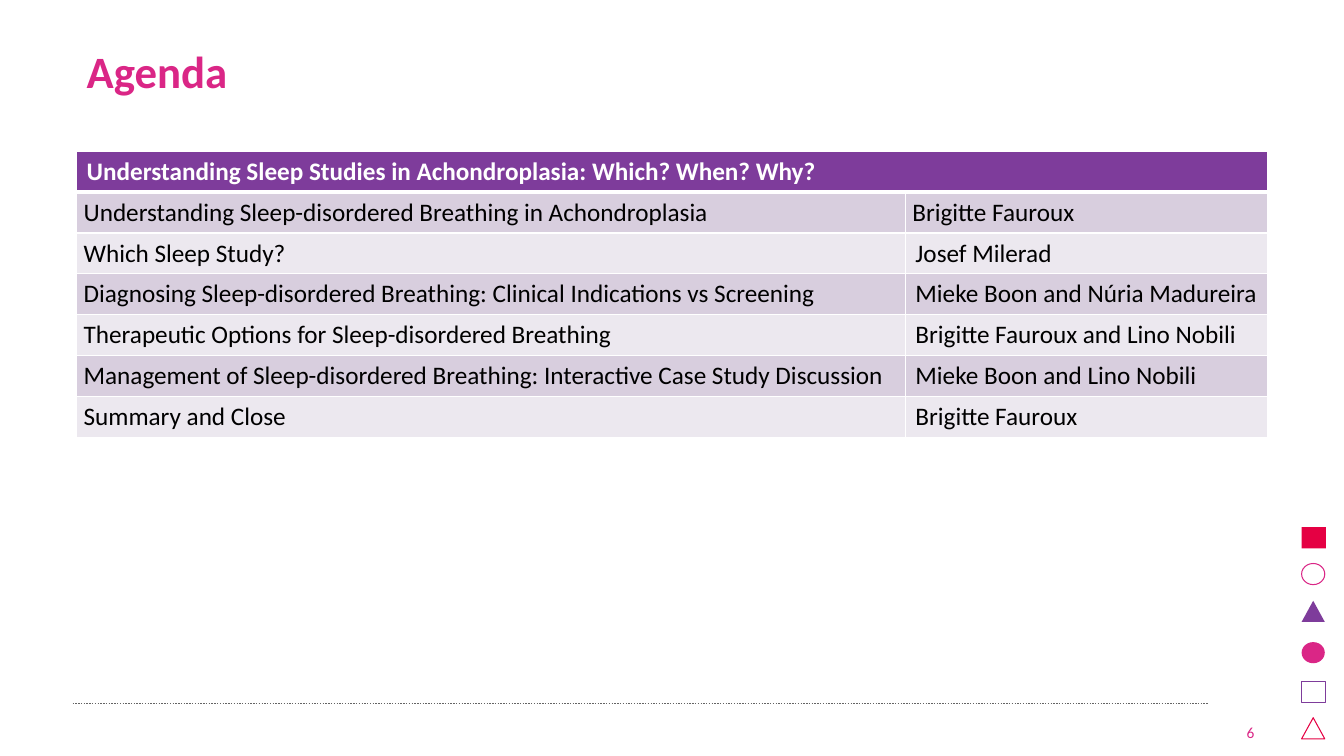
from lxml.etree import SubElement
from pptx import Presentation
from pptx.dml.color import RGBColor
from pptx.enum.dml import MSO_LINE
from pptx.enum.shapes import MSO_CONNECTOR, MSO_SHAPE as Preset
from pptx.enum.text import MSO_ANCHOR as Anchor, PP_ALIGN as Align
from pptx.oxml import parse_xml
from pptx.oxml.ns import nsdecls, qn
from pptx.util import Inches, Pt

TITLE = "Agenda"
PAGE_NUMBER = "6"
SESSION = "Understanding Sleep Studies in Achondroplasia: Which? When? Why?"
TALKS = [
    ("Understanding Sleep-disordered Breathing in Achondroplasia", "Brigitte Fauroux"),
    ("Which Sleep Study?", "Josef Milerad"),
    ("Diagnosing Sleep-disordered Breathing: Clinical Indications vs Screening",
     "Mieke Boon and Núria Madureira"),
    ("Therapeutic Options for Sleep-disordered Breathing", "Brigitte Fauroux and Lino Nobili"),
    ("Management of Sleep-disordered Breathing: Interactive Case Study Discussion",
     "Mieke Boon and Lino Nobili"),
    ("Summary and Close", "Brigitte Fauroux"),
]
PINK, PURPLE, RED = "DA2686", "7E3C9B", "E50043"
WHITE, BLACK, GREY = "FFFFFF", "000000", "646464"
BANDS = ["D8CEDE", "ECE8EF"]
ORNAMENTS = [
    (Preset.RECTANGLE, 5.23, 0.24, RED, True),
    (Preset.OVAL, 5.59, 0.23, PINK, False),
    (Preset.ISOSCELES_TRIANGLE, 5.96, 0.23, PURPLE, True),
    (Preset.OVAL, 6.37, 0.23, PINK, True),
    (Preset.RECTANGLE, 6.76, 0.24, PURPLE, False),
    (Preset.ISOSCELES_TRIANGLE, 7.12, 0.23, RED, False),
]
LEFT, WIDTH = 0.76, 11.81
COLUMNS = [8.22, 3.59]
ROW_HEIGHT = 2.84 / 7


def color(value):
    return RGBColor.from_string(value)


def style(para, size, value, bold=False):
    para.font.name = "Calibri"
    para.font.size = Pt(size)
    para.font.bold = bold
    para.font.color.rgb = color(value)


def add_borders(cell, bottom):
    sides = [("L", 1), ("R", 1), ("T", 1), ("B", bottom)]
    for index, (side, points) in enumerate(sides):
        border = parse_xml(
            f'<a:ln{side} {nsdecls("a")} w="{Pt(points)}"><a:solidFill>'
            f'<a:srgbClr val="{WHITE}"/></a:solidFill></a:ln{side}>')
        cell._tc.get_or_add_tcPr().insert(index, border)


def fill_cell(cell, text, fill, value=BLACK, bold=False, bottom=1):
    cell.text = text
    cell.vertical_anchor = Anchor.MIDDLE
    cell.fill.solid()
    cell.fill.fore_color.rgb = color(fill)
    style(cell.text_frame.paragraphs[0], 18, value, bold)
    add_borders(cell, bottom)


def tighten(cell):
    cell.margin_left = cell.margin_right = Inches(0.07)
    cell.margin_top = cell.margin_bottom = 0


def add_ornaments(page):
    for preset, top, width, value, solid in ORNAMENTS:
        shape = page.shapes.add_shape(
            preset, Inches(12.91), Inches(top), Inches(width), Inches(0.21))
        shape.shadow.inherit = False
        if solid:
            shape.fill.solid()
            shape.fill.fore_color.rgb = color(value)
            shape.line.fill.background()
        else:
            shape.fill.background()
            shape.line.color.rgb = color(value)
            shape.line.width = Pt(0.75)


def add_footer(page):
    rule = page.shapes.add_connector(
        MSO_CONNECTOR.STRAIGHT, Inches(0.72), Inches(6.98), Inches(11.99), Inches(6.98))
    rule.line.color.rgb = color(GREY)
    rule.line.width = Pt(1)
    rule.line.dash_style = MSO_LINE.ROUND_DOT
    SubElement(rule._element.spPr, qn("a:effectLst"))
    box = page.shapes.add_textbox(Inches(11.96), Inches(7.01), Inches(0.58), Inches(0.4))
    frame = box.text_frame
    frame.word_wrap = True
    frame.vertical_anchor = Anchor.BOTTOM
    frame.text = PAGE_NUMBER
    frame.paragraphs[0].alignment = Align.RIGHT
    style(frame.paragraphs[0], 11, PINK)


def add_title(page):
    title = page.shapes.title
    title.left, title.top = Inches(LEFT), Inches(0.17)
    title.width, title.height = Inches(WIDTH), Inches(1.12)
    title.text_frame.text = TITLE
    title.text_frame.vertical_anchor = Anchor.MIDDLE
    para = title.text_frame.paragraphs[0]
    para.alignment = Align.LEFT
    para.line_spacing = 0.9
    style(para, 32, PINK, True)


def add_agenda(page):
    rows = len(TALKS) + 1
    table = page.shapes.add_table(
        rows, len(COLUMNS), Inches(LEFT), Inches(1.5),
        Inches(WIDTH), Inches(ROW_HEIGHT * rows)).table
    for column, width in zip(table.columns, COLUMNS):
        column.width = Inches(width)
    for row in table.rows:
        row.height = Inches(ROW_HEIGHT)
    table.cell(0, 0).merge(table.cell(0, 1))
    for column, text in enumerate([SESSION, ""]):
        fill_cell(table.cell(0, column), text, PURPLE, WHITE, True, 3)
    for row, talk in enumerate(TALKS, 1):
        for column, text in enumerate(talk):
            fill_cell(table.cell(row, column), text, BANDS[(row - 1) % 2])
        tighten(table.cell(row, 0))
    tighten(table.cell(1, 1))


def main():
    deck = Presentation()
    deck.slide_width, deck.slide_height = Inches(13.33), Inches(7.5)
    page = deck.slides.add_slide(deck.slide_layouts[5])
    add_ornaments(page)
    add_footer(page)
    add_title(page)
    add_agenda(page)
    deck.save("out.pptx")


if __name__ == "__main__":
    main()
